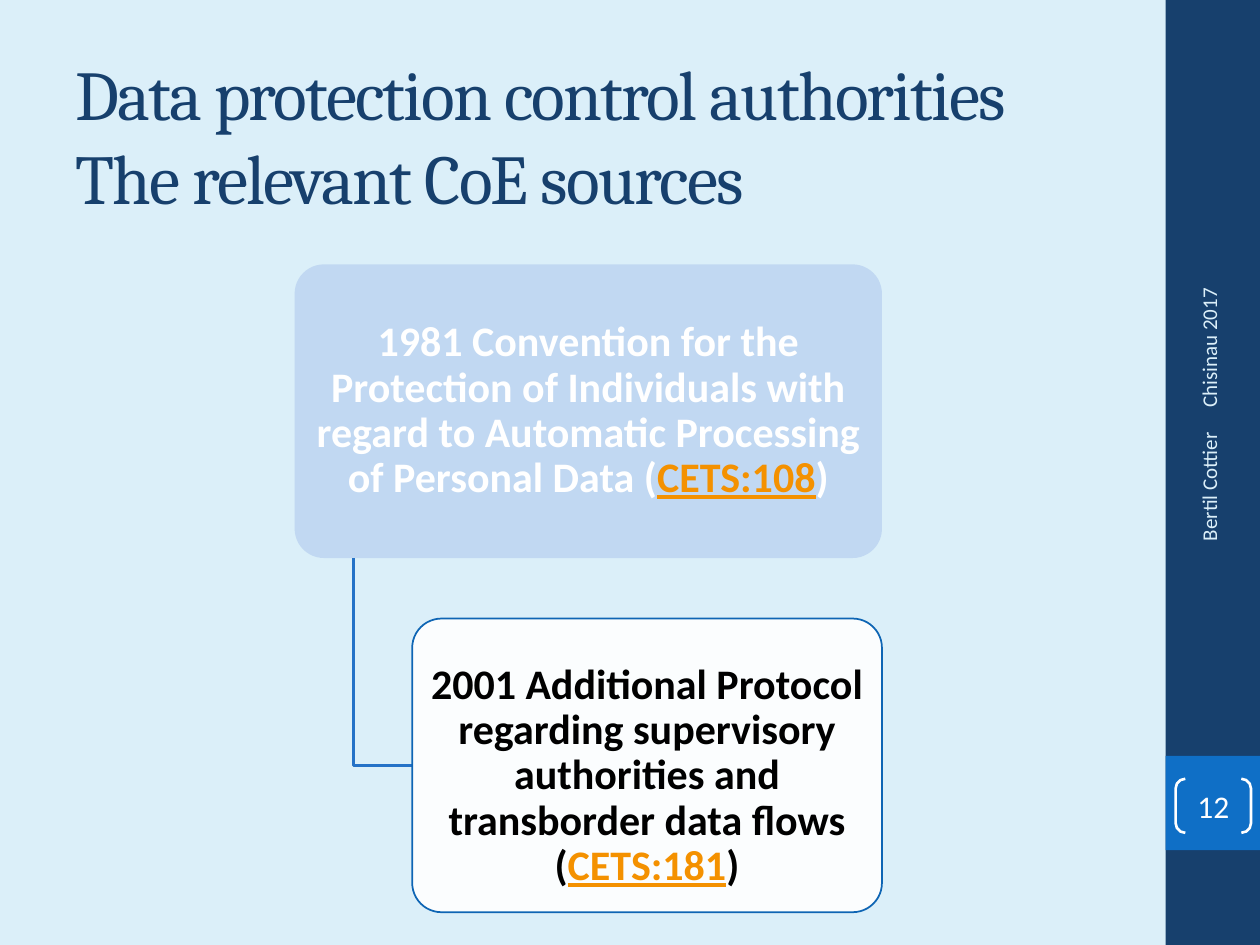
from dataclasses import dataclass

from lxml import etree
from pptx import Presentation
from pptx.dml.color import RGBColor
from pptx.enum.shapes import MSO_SHAPE
from pptx.enum.text import MSO_ANCHOR, PP_ALIGN
from pptx.oxml.ns import qn
from pptx.util import Cm, Pt

RECT, ROUNDED, BRACKETS = MSO_SHAPE.RECTANGLE, MSO_SHAPE.ROUNDED_RECTANGLE, MSO_SHAPE.DOUBLE_BRACKET
LEFT, CENTER, RIGHT = PP_ALIGN.LEFT, PP_ALIGN.CENTER, PP_ALIGN.RIGHT
MIDDLE = MSO_ANCHOR.MIDDLE

NAVY, PALE, WHITE, ORANGE = "17406D", "DBEFF9", "FFFFFF", "F49100"
SLIDE_W, SLIDE_H = 25.4, 19.05
SIDEBAR_W = 1.9
SIDEBAR_LEFT = SLIDE_W - SIDEBAR_W


@dataclass(frozen=True)
class Box:
    """Position and size in centimetres."""
    left: float
    top: float
    width: float
    height: float

    def lengths(self) -> tuple:
        return Cm(self.left), Cm(self.top), Cm(self.width), Cm(self.height)


@dataclass(frozen=True)
class Source:
    box: Box
    title: str
    reference: str
    color: str
    fill: str
    opacity: int = 100
    outline: str | None = None
    inset_top: float = 0.08


@dataclass(frozen=True)
class SideNote:
    box: Box
    text: str
    align: PP_ALIGN


CONVENTION = Source(
    Box(5.94, 5.33, 11.84, 5.92),
    "1981 Convention for the Protection of Individuals with regard to "
    "Automatic Processing of Personal Data (",
    "CETS:108", WHITE, "C1D8F2")
PROTOCOL = Source(
    Box(8.31, 12.47, 9.47, 5.92),
    "2001 Additional Protocol regarding supervisory authorities and "
    "transborder data flows (",
    "CETS:181", "000000", WHITE, 90, "0E65B4", 0.52)
SIDE_NOTES = (
    SideNote(Box(20.98, 4.57, 6.78, 1.02), "Chisinau 2017", LEFT),
    SideNote(Box(21.08, 11.25, 6.58, 1.02), "Bertil Cottier", RIGHT),
)


def rgb(value: str) -> RGBColor:
    return RGBColor.from_string(value)


def set_line(shape, color: str | None, width: float = 1) -> None:
    if color is None:
        shape.line.fill.background()
    else:
        shape.line.color.rgb = rgb(color)
        shape.line.width = Pt(width)


def add_shape(slide, kind, box: Box, fill: str | None = None,
              outline: str | None = None, width: float = 1):
    shape = slide.shapes.add_shape(kind, *box.lengths())
    shape.shadow.inherit = False
    if fill is None:
        shape.fill.background()
    else:
        shape.fill.solid()
        shape.fill.fore_color.rgb = rgb(fill)
    set_line(shape, outline, width)
    return shape


def set_opacity(shape, percent: int) -> None:
    color = shape._element.spPr.find(qn("a:solidFill"))[0]
    etree.SubElement(color, qn("a:alpha")).set("val", str(percent * 1000))


def set_frame(shape, **insets: float):
    """Wrap and centre the text vertically; insets are in centimetres."""
    frame = shape.text_frame
    frame.word_wrap = True
    frame.vertical_anchor = MIDDLE
    for side, value in insets.items():
        setattr(frame, f"margin_{side}", Cm(value))
    return frame


def add_run(paragraph, text: str, color: str, size: float, **formats):
    run = paragraph.add_run()
    run.text = text
    run.font.color.rgb = rgb(color)
    for name, value in {"name": "Calibri", "size": Pt(size), **formats}.items():
        setattr(run.font, name, value)
    return run


def add_title(slide, lines: tuple) -> None:
    box = slide.shapes.add_textbox(*Box(1.27, 0.76, 21.82, 3.91).lengths())
    paragraph = set_frame(box).paragraphs[0]
    for index, line in enumerate(lines):
        if index:
            paragraph.add_line_break()
        run = add_run(paragraph, line, NAVY, 40, name="Cambria")
        run._r.get_or_add_rPr().set("spc", "-100")


def add_source(slide, source: Source) -> None:
    shape = add_shape(slide, ROUNDED, source.box, source.fill, source.outline)
    shape.adjustments[0] = 0.1
    if source.opacity < 100:
        set_opacity(shape, source.opacity)
    frame = set_frame(shape, left=0.13, right=0.13, top=source.inset_top, bottom=0.08)
    paragraph = frame.paragraphs[0]
    paragraph.alignment = CENTER
    paragraph.line_spacing = 0.9
    add_run(paragraph, source.title, source.color, 24, bold=True)
    add_run(paragraph, source.reference, ORANGE, 24, bold=True, underline=True)
    add_run(paragraph, ")", source.color, 24, bold=True)


def add_branch(slide, parent: Box, child: Box) -> None:
    """Draw an elbow from the parent's bottom edge to the child's left edge."""
    x = Cm(parent.left + parent.width / 10)
    y = Cm(child.top + child.height / 2)
    builder = slide.shapes.build_freeform(x, Cm(parent.top + parent.height))
    builder.add_line_segments([(x, y), (Cm(child.left), y)], close=False)
    branch = builder.convert_to_shape()
    branch.shadow.inherit = False
    branch.fill.background()
    set_line(branch, "2572C7", 2)


def add_side_note(slide, note: SideNote) -> None:
    box = slide.shapes.add_textbox(*note.box.lengths())
    box.rotation = 270
    paragraph = set_frame(box).paragraphs[0]
    paragraph.alignment = note.align
    add_run(paragraph, note.text, PALE, 12)


def add_page_number(slide, number: str) -> None:
    brackets = add_shape(slide, BRACKETS, Box(23.7, 15.7, 1.52, 1.09), None, WHITE, 1.5)
    brackets.adjustments[0] = 0.179
    paragraph = set_frame(brackets, left=0, right=0, top=0, bottom=0).paragraphs[0]
    paragraph.alignment = CENTER
    add_run(paragraph, number, WHITE, 18)


def main() -> None:
    deck = Presentation()
    deck.slide_width, deck.slide_height = Cm(SLIDE_W), Cm(SLIDE_H)
    slide = deck.slides.add_slide(deck.slide_layouts[6])
    slide.background.fill.solid()
    slide.background.fill.fore_color.rgb = rgb(PALE)

    add_shape(slide, RECT, Box(SIDEBAR_LEFT, 0, SIDEBAR_W, SLIDE_H), NAVY)
    add_shape(slide, RECT, Box(SIDEBAR_LEFT, 15.24, SIDEBAR_W, SIDEBAR_W), "0F6FC6")
    add_title(slide, ("Data protection control authorities", "The relevant CoE sources"))
    add_source(slide, CONVENTION)
    add_branch(slide, CONVENTION.box, PROTOCOL.box)
    add_source(slide, PROTOCOL)
    for note in SIDE_NOTES:
        add_side_note(slide, note)
    add_page_number(slide, "12")
    deck.save("out.pptx")


if __name__ == "__main__":
    main()
